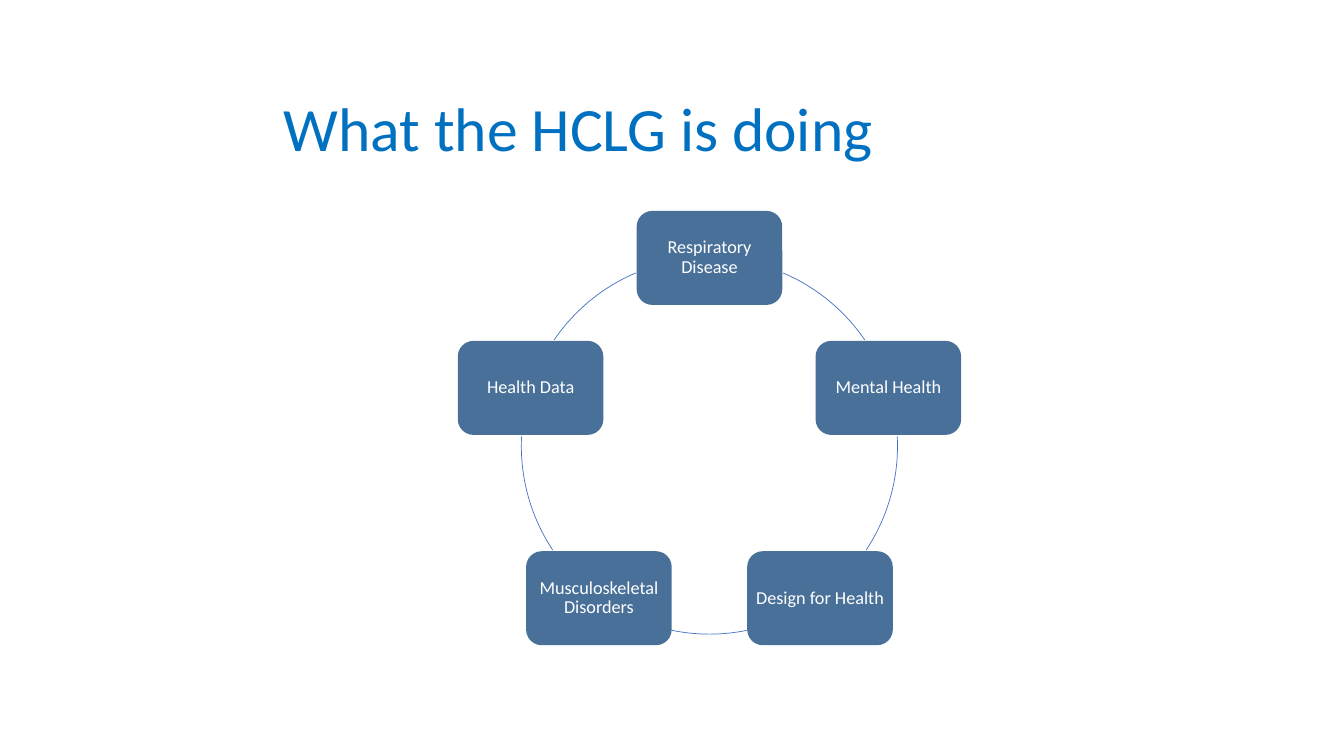
import math

from pptx import Presentation
from pptx import util as u
from pptx.dml.color import RGBColor
from pptx.enum import shapes, text

COLOURS = {"title": "0070C0", "box": "497099", "label": "FFFFFF", "ring": "4472C4"}
FONT = "Calibri"

# Ring geometry, in centimetres
CENTRE_X, CENTRE_Y, RADIUS = 17.88, 11.24, 4.74
BOX_WIDTH, BOX_HEIGHT = 3.67, 2.37
BOX_MARGIN = 0.1

TOPICS = [
    "Respiratory Disease",
    "Mental Health",
    "Design for Health",
    "Musculoskeletal Disorders",
    "Health Data",
]
# Visible stretches of the ring, in degrees clockwise from the right
ARCS = [(293.1, 325.7), (357.1, 33.6), (78.4, 101.6), (146.4, 182.9), (214.3, 246.9)]


def colour(name):
    return RGBColor.from_string(COLOURS[name])


def write(shape, words, size, colour_name, alignment):
    frame = shape.text_frame
    frame.word_wrap = True
    frame.vertical_anchor = text.MSO_ANCHOR.MIDDLE
    frame.text = words
    paragraph = frame.paragraphs[0]
    paragraph.alignment = alignment
    paragraph.line_spacing = 0.9
    font = paragraph.runs[0].font
    font.name, font.size = FONT, u.Pt(size)
    font.color.rgb = colour(colour_name)


def add_title(slide, words):
    title = slide.shapes.add_textbox(u.Cm(6.9), u.Cm(1.47), u.Cm(24.28), u.Cm(3.68))
    write(title, words, 44, "title", text.PP_ALIGN.LEFT)


def add_arc(slide, start, end):
    arc = slide.shapes.add_shape(
        shapes.MSO_SHAPE.ARC,
        u.Cm(CENTRE_X - RADIUS), u.Cm(CENTRE_Y - RADIUS),
        u.Cm(2 * RADIUS), u.Cm(2 * RADIUS),
    )
    # One degree is 60000 units; adjustments count in 100000 units
    arc.adjustments[0] = start * 0.6
    arc.adjustments[1] = end * 0.6
    arc.shadow.inherit = False
    arc.fill.background()
    arc.line.color.rgb = colour("ring")
    arc.line.width = u.Pt(0.5)


def add_topic(slide, words, degrees):
    angle = math.radians(degrees)
    left = CENTRE_X + RADIUS * math.cos(angle) - BOX_WIDTH / 2
    top = CENTRE_Y + RADIUS * math.sin(angle) - BOX_HEIGHT / 2
    box = slide.shapes.add_shape(
        shapes.MSO_SHAPE.ROUNDED_RECTANGLE,
        u.Cm(left), u.Cm(top), u.Cm(BOX_WIDTH), u.Cm(BOX_HEIGHT),
    )
    box.shadow.inherit = False
    box.fill.solid()
    box.fill.fore_color.rgb = colour("box")
    box.line.fill.background()
    # The rounded corners already inset the text, so the margins stay small
    frame = box.text_frame
    frame.margin_left = frame.margin_right = u.Cm(BOX_MARGIN)
    frame.margin_top = frame.margin_bottom = u.Cm(BOX_MARGIN)
    write(box, words, 13, "label", text.PP_ALIGN.CENTER)


def main():
    presentation = Presentation()
    presentation.slide_width = u.Cm(33.87)
    presentation.slide_height = u.Cm(19.05)
    slide = presentation.slides.add_slide(presentation.slide_layouts[6])

    add_title(slide, "What the HCLG is doing")

    # Ring between the topics
    for start, end in ARCS:
        add_arc(slide, start, end)

    # Topics, clockwise from the top
    step = 360 / len(TOPICS)
    for index, topic in enumerate(TOPICS):
        add_topic(slide, topic, index * step - 90)

    presentation.save("out.pptx")


if __name__ == "__main__":
    main()
